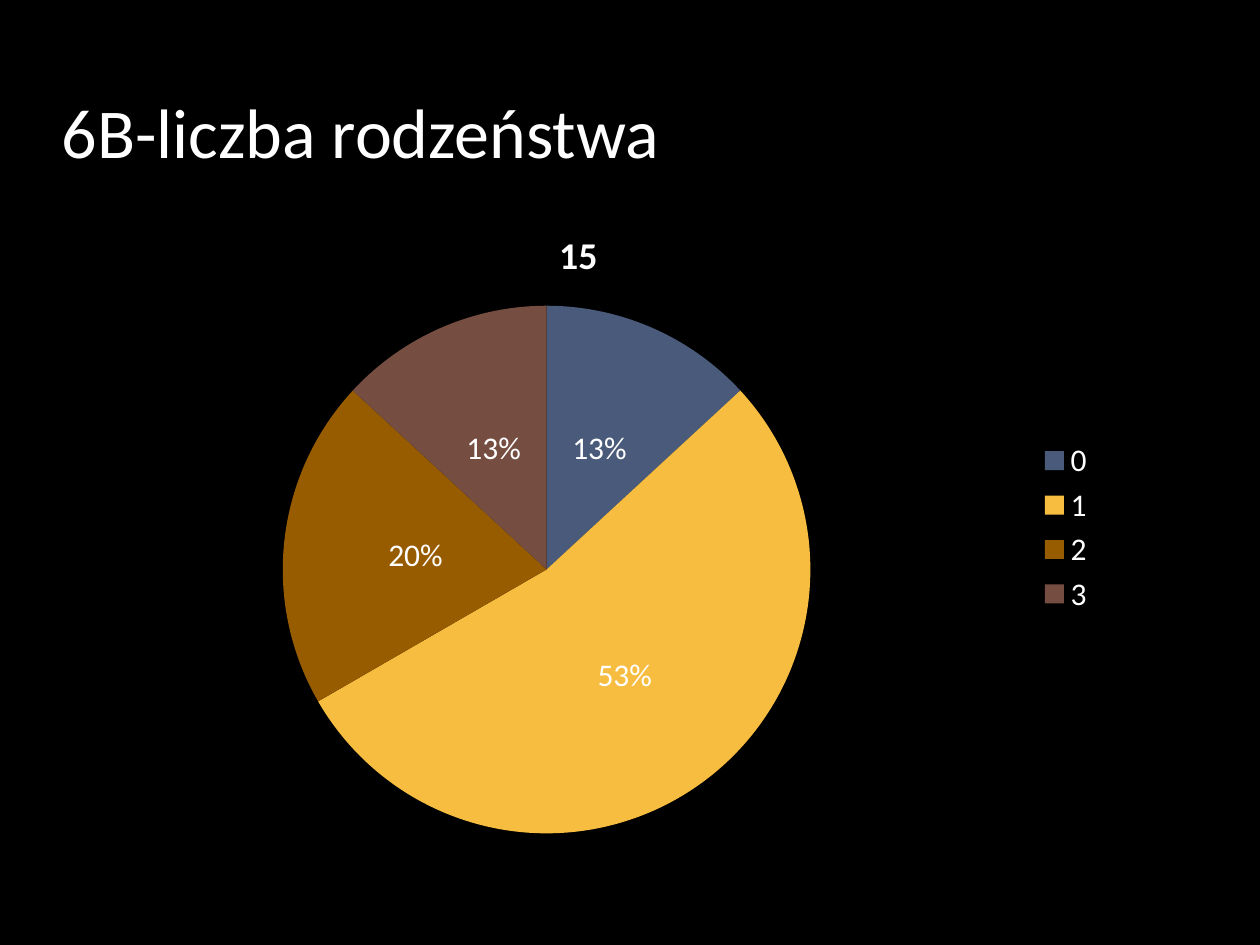
from dataclasses import dataclass

from lxml import etree
from pptx import Presentation
from pptx.chart.data import CategoryChartData
from pptx.dml.color import RGBColor
from pptx.enum import chart as ch, text
from pptx.oxml import ns
from pptx.util import Inches, Pt


@dataclass(frozen=True)
class Theme:
    font: str = "Calibri"
    background: str = "000000"
    ink: str = "FFFFFF"
    slices: tuple = ("4A5A7A", "F7BD40", "975C00", "754D41")
    title_size: int = 40
    chart_title_size: float = 21.6
    chart_size: int = 18


theme = Theme()


def write_text(tf, content, size, bold=False, space_before=0):
    tf.text = content
    p = tf.paragraphs[0]
    p.alignment = text.PP_ALIGN.LEFT
    p.space_before = Pt(space_before)
    set_font(p.runs[0].font, size, bold)


def set_font(font, size, bold=False):
    font.name = theme.font
    font.size = Pt(size)
    font.bold = bold
    font.color.rgb = RGBColor.from_string(theme.ink)


prs = Presentation()
prs.slide_width, prs.slide_height = Inches(10), Inches(7.5)
s = prs.slides.add_slide(prs.slide_layouts[5])
s.background.fill.solid()
s.background.fill.fore_color.rgb = RGBColor.from_string(theme.background)

# Title
left, width = Inches(0.39), Inches(8.4)
title = s.shapes.title
title.left, title.top, title.width, title.height = left, Inches(0.25), width, Inches(1.17)
title.text_frame.vertical_anchor = text.MSO_ANCHOR.BOTTOM
write_text(title.text_frame, "6B-liczba rodzeństwa", theme.title_size, space_before=4)

# Sibling shares
data = CategoryChartData(number_format='0"%"')
data.categories = ["0", "1", "2", "3"]
data.add_series("15", (13, 53, 20, 13))
pie = s.shapes.add_chart(
    ch.XL_CHART_TYPE.PIE, left, Inches(1.6), width, Inches(5.17), data
).chart
set_font(pie.font, theme.chart_size)
pie.has_title = True
write_text(pie.chart_title.text_frame, "15", theme.chart_title_size, bold=True)
pie.chart_title.include_in_layout = False

pie.has_legend = True
pie.legend.position = ch.XL_LEGEND_POSITION.RIGHT
pie.legend.include_in_layout = False
set_font(pie.legend.font, theme.chart_size)

plot = pie.plots[0]
plot.vary_by_categories = True
for i, color in enumerate(theme.slices):
    fmt = plot.series[0].points[i].format
    fmt.fill.solid()
    fmt.fill.fore_color.rgb = RGBColor.from_string(color)
    fmt.line.fill.background()

plot.has_data_labels = True
labels = plot.data_labels
labels.show_value = True
labels.show_percentage = False
labels.number_format = '0"%"'
labels.number_format_is_linked = False
labels.position = ch.XL_LABEL_POSITION.CENTER
set_font(labels.font, theme.chart_size)

# Fixed pie area, as fractions of the chart frame
area = pie.element.find(".//" + ns.qn("c:plotArea"))
for old in area.findall(ns.qn("c:layout")):
    area.remove(old)
layout = etree.Element(ns.qn("c:layout"))
manual = etree.SubElement(layout, ns.qn("c:manualLayout"))
settings = {"layoutTarget": "inner", "xMode": "edge", "yMode": "edge",
            "x": 0.22, "y": 0.16, "w": 0.5, "h": 0.81}
for tag, value in settings.items():
    etree.SubElement(manual, ns.qn("c:" + tag)).set("val", str(value))
area.insert(0, layout)

prs.save("out.pptx")
